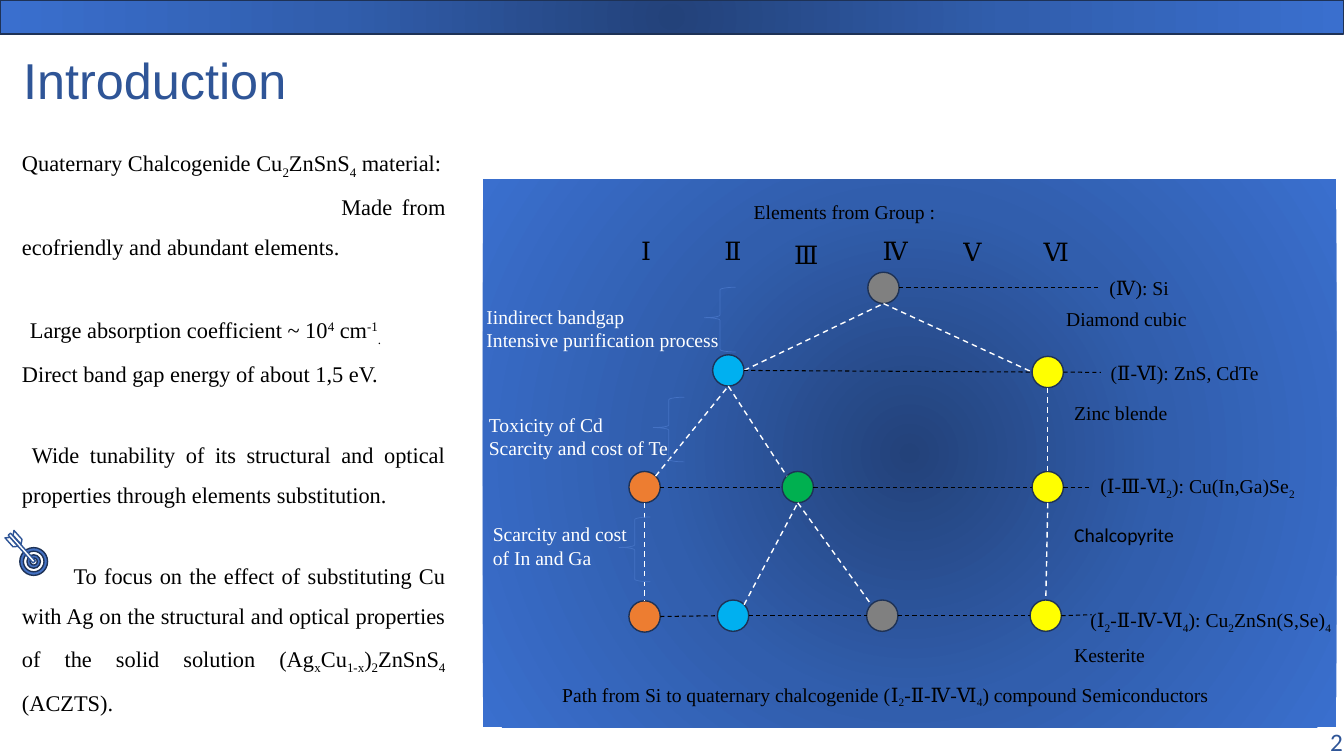
import pptx
import pptx.util
import pptx.oxml
import pptx.oxml.ns
import pptx.dml.color
import pptx.enum.dml
import pptx.enum.shapes
import pptx.enum.text

Cm, Pt = pptx.util.Cm, pptx.util.Pt
SHAPE = pptx.enum.shapes.MSO_SHAPE
ALIGN = pptx.enum.text.PP_ALIGN

COLORS = {"white": "FFFFFF", "black": "000000", "navy": "2F5597", "edge": "1E3256",
          "blue": "4472C4", "grey": "808080", "yellow": "FFFF00", "cyan": "00B0F0",
          "green": "00B050", "orange": "ED7D31",
          "deep": "23427A", "mid": "315EAD", "light": "3A6FCE"}

# Content: text between bars is subscript, or superscript after ^
TITLE = "Introduction"
# text, first-line indent (cm), space before (pt)
BODY = [
    ("Quaternary Chalcogenide Cu|2|ZnSnS|4| material:", 0, 0),
    ("Made from ecofriendly and abundant elements.", 8.05, 0),
    ("Large absorption coefficient ~ 10|^4| cm|^-1||.|", 0.2, 29),
    ("Direct band gap energy of about 1,5 eV.", 0, 0),
    ("Wide tunability of its structural and optical properties through "
     "elements substitution.", 0.25, 29),
    ("To focus on the effect of substituting Cu with Ag on the structural and optical "
     "properties of the solid solution (Ag|x|Cu|1-x|)|2|ZnSnS|4| (ACZTS).", 1.3, 29),
]
PANELS = [(0, 0, 33.86, 0.86, "edge"), (12.17, 4.52, 21.51, 13.81, None)]
# numeral, centre x, top
GROUPS = [("Ⅰ", 16.28, 5.84), ("Ⅱ", 18.47, 5.84), ("Ⅲ", 20.32, 5.95),
          ("Ⅳ", 22.56, 5.84), ("Ⅴ", 24.51, 5.87), ("Ⅵ", 26.62, 5.87)]
NODE = 0.79
NODES = {  # left, top, colour
    "Si": (21.87, 6.86, "grey"),
    "II a": (17.96, 8.94, "cyan"), "VI a": (26.01, 8.98, "yellow"),
    "I b": (15.85, 11.88, "orange"), "III b": (19.71, 11.88, "green"),
    "VI b": (26.01, 11.88, "yellow"),
    "I c": (15.85, 15.14, "orange"), "II c": (18.08, 15.12, "cyan"),
    "IV c": (21.84, 15.12, "grey"), "VI c": (25.96, 15.12, "yellow"),
}
SITES = {"top": (0.5, 0), "left": (0, 0.5), "bottom": (0.5, 1), "right": (1, 0.5),
         "top left": (0.15, 0.15), "top right": (0.85, 0.15)}
PATHS = [("Si", "bottom", "VI a", "left"), ("II a", "right", "Si", "bottom"),
         ("II a", "bottom", "III b", "top left"), ("I b", "top right", "II a", "bottom"),
         ("III b", "bottom", "IV c", "top left"), ("II c", "top right", "III b", "bottom"),
         ("I b", "bottom", "I c", "top"), ("VI a", "bottom", "VI b", "top"),
         ("VI b", "bottom", "VI c", "top")]
ROWS = [("II a", "VI a"), ("I b", "III b", "VI b"), ("I c", "II c", "IV c", "VI c")]
# node, text, left, top, width
COMPOUNDS = [("Si", "(Ⅳ): Si", 27.71, 6.86, 2.77),
             ("VI a", "(Ⅱ-Ⅵ): ZnS, CdTe", 27.74, 8.99, 4.45),
             ("VI b", "(Ⅰ-Ⅲ-Ⅵ|2|): Cu(In,Ga)Se|2|", 27.48, 11.88, 5.97)]
KESTERITE = ("(Ⅰ|2|-Ⅱ-Ⅳ-Ⅵ|4|): Cu|2|ZnSn(S,Se)|4|", 27.23, 15.27, 6.65, 0.79)
KESTERITE_LINK = (27.51, 15.49)
STRUCTURES = [("Diamond cubic", 26.62, 7.62, "Times New Roman"),
              ("Zinc blende", 26.82, 9.98, "Times New Roman"),
              ("Chalcopyrite", 26.82, 13.06, "Calibri"),
              ("Kesterite", 26.82, 16.08, "Times New Roman")]
# lines, text left and top, brace left and top
DRAWBACKS = [
    (["Iindirect bandgap", "Intensive purification process"], 12.01, 7.54, 17.75, 7.24),
    (["Toxicity of Cd", "Scarcity and cost of Te"], 12.07, 10.27, 16.46, 10.01),
    (["Scarcity and cost", "of In and Ga"], 12.17, 13.03, 15.6, 13.03)]
HEADING = ("Elements from Group :", 18.54, 4.85, 5.49, 0.97)
CAPTION = ("Path from Si to quaternary chalcogenide (Ⅰ|2|-Ⅱ-Ⅳ-Ⅵ|4|) compound Semiconductors",
           13.92, 17.04, 18.21, 0.99)
TARGET = (0.85, 14.15)
RINGS = [(0.7, "blue"), (0.52, "white"), (0.34, "blue"), (0.18, "white")]
# shape, left, top, width, height, flipped
ARROW = [(SHAPE.ROUNDED_RECTANGLE, 0.08, 13.77, 0.94, 0.08, False),
         (SHAPE.PARALLELOGRAM, 0.1, 13.61, 0.38, 0.1, False),
         (SHAPE.PARALLELOGRAM, 0.25, 13.49, 0.38, 0.1, True)]


def rgb(name):
    return pptx.dml.color.RGBColor.from_string(COLORS[name])


def add_runs(p, text, size, color="black", font="Times New Roman"):
    for i, part in enumerate(text.split("|")):
        if not part:
            continue
        r = p.add_run()
        r.text = part.lstrip("^") if i % 2 else part
        r.font.size, r.font.name = Pt(size), font
        r.font.color.rgb = rgb(color)
        if i % 2:
            r.font._element.set("baseline", "30000" if part[0] == "^" else "-25000")


def add_text(lines, x, y, w, h, size=14, color="black", font="Times New Roman",
             align=ALIGN.LEFT, inset=None):
    s = slide.shapes.add_textbox(Cm(x), Cm(y), Cm(w), Cm(h))
    tf = s.text_frame
    tf.word_wrap = True
    tf.vertical_anchor = pptx.enum.text.MSO_ANCHOR.MIDDLE
    if inset is not None:
        tf.margin_left = tf.margin_right = tf.margin_top = tf.margin_bottom = Cm(inset)
    for i, line in enumerate(lines):
        p = tf.add_paragraph() if i else tf.paragraphs[0]
        p.alignment = align
        add_runs(p, line, size, color, font)
    return s


def add_shape(kind, x, y, w, h, fill=None, line=None, width=1):
    s = slide.shapes.add_shape(kind, Cm(x), Cm(y), Cm(w), Cm(h))
    s.shadow.inherit = False
    if fill:
        s.fill.solid()
        s.fill.fore_color.rgb = rgb(fill)
    else:
        s.fill.background()
    if line:
        s.line.color.rgb = rgb(line)
        s.line.width = Pt(width)
    else:
        s.line.fill.background()
    return s


def add_dash(start, end, color, width):
    c = slide.shapes.add_connector(pptx.enum.shapes.MSO_CONNECTOR.STRAIGHT,
                                   Cm(start[0]), Cm(start[1]), Cm(end[0]), Cm(end[1]))
    c.line.color.rgb = rgb(color)
    c.line.width = Pt(width)
    c.line.dash_style = pptx.enum.dml.MSO_LINE.DASH
    c._element.spPr.append(pptx.oxml.parse_xml(
        "<a:effectLst %s/>" % pptx.oxml.ns.nsdecls("a")))
    return c


def site(node, side):
    x, y, _ = NODES[node]
    dx, dy = SITES[side]
    return x + dx * NODE, y + dy * NODE


def radial_fill(s):
    stops = "".join('<a:gs pos="%d"><a:srgbClr val="%s"/></a:gs>' % (pos, COLORS[name])
                    for pos, name in ((0, "deep"), (50000, "mid"), (100000, "light")))
    grad = pptx.oxml.parse_xml(
        '<a:gradFill %s rotWithShape="1"><a:gsLst>%s</a:gsLst><a:path path="circle">'
        '<a:fillToRect l="50000" t="50000" r="50000" b="50000"/></a:path></a:gradFill>'
        % (pptx.oxml.ns.nsdecls("a"), stops))
    sp = s._element.spPr
    sp.replace(sp.find(pptx.oxml.ns.qn("a:noFill")), grad)


prs = pptx.Presentation()
prs.slide_width, prs.slide_height = Cm(33.87), Cm(19.05)
slide = prs.slides.add_slide(prs.slide_layouts[1])
title, body = slide.placeholders

# Title and body text
for s, (x, y, w, h) in ((title, (0.33, 1.27, 11.13, 1.45)), (body, (0.3, 3.25, 11.18, 15.3))):
    s.left, s.top, s.width, s.height = Cm(x), Cm(y), Cm(w), Cm(h)
    s.text_frame.word_wrap = True
    s.text_frame.auto_size = pptx.enum.text.MSO_AUTO_SIZE.NONE
title.text_frame.vertical_anchor = pptx.enum.text.MSO_ANCHOR.MIDDLE
title.text_frame.paragraphs[0].alignment = ALIGN.LEFT
add_runs(title.text_frame.paragraphs[0], TITLE, 36, "navy", "Arial")
tf = body.text_frame
for i, (text, indent, before) in enumerate(BODY):
    p = tf.add_paragraph() if i else tf.paragraphs[0]
    p.alignment = ALIGN.JUSTIFY
    p.line_spacing, p.space_before = 1.5, Pt(before)
    pPr = p._element.get_or_add_pPr()
    pPr.set("marL", "0")
    pPr.set("indent", str(int(Cm(indent))))
    pPr.append(pptx.oxml.parse_xml("<a:buNone %s/>" % pptx.oxml.ns.nsdecls("a")))
    add_runs(p, text, 16)

# Top bar and diagram panel
for x, y, w, h, line in PANELS:
    radial_fill(add_shape(SHAPE.RECTANGLE, x, y, w, h, line=line))

# Group numerals
add_text([HEADING[0]], *HEADING[1:], align=ALIGN.CENTER)
for numeral, x, y in GROUPS:
    add_text([numeral], x - 0.5, y, 1, 0.94, size=18, align=ALIGN.CENTER, inset=0)

# Element nodes and dashed paths
for x, y, color in NODES.values():
    add_shape(SHAPE.FLOWCHART_CONNECTOR, x, y, NODE, NODE, color, "edge")
for start, side, end, end_side in PATHS:
    add_dash(site(start, side), site(end, end_side), "white", 1)
for row in ROWS:
    for start, end in zip(row, row[1:]):
        add_dash(site(start, "right"), site(end, "left"), "black", 0.75)

# Compounds and crystal structures
for node, text, x, y, w in COMPOUNDS:
    label = add_text([text], x, y, w, NODE)
    c = add_dash(site(node, "right"), (x, y + NODE / 2), "black", 0.75)
    c.end_connect(label, 1)
add_text([KESTERITE[0]], *KESTERITE[1:])
add_dash(site("VI c", "right"), KESTERITE_LINK, "black", 0.75)
for text, x, y, font in STRUCTURES:
    add_text([text], x, y, 4.8, 0.84, font=font)
add_text([CAPTION[0]], *CAPTION[1:])

# Drawbacks with braces
for lines, x, y, brace_x, brace_y in DRAWBACKS:
    add_text(lines, x, y, 7.1, 1.45, color="white")
    s = add_shape(SHAPE.LEFT_BRACE, brace_x, brace_y, 0.79, 1.63, line="blue", width=0.5)
    s.adjustments[0], s.adjustments[1] = 0.083, 0.47

# Target with arrow
for d, color in RINGS:
    add_shape(SHAPE.OVAL, TARGET[0] - d / 2, TARGET[1] - d / 2, d, d, color, "edge")
for kind, x, y, w, h, flipped in ARROW:
    s = add_shape(kind, x, y, w, h, "white", "navy")
    s.rotation = 228.2
    if kind == SHAPE.PARALLELOGRAM:
        s.adjustments[0] = 0.778
    if flipped:
        s._element.spPr.xfrm.set("flipH", "1")

# Page number
add_text(["2"], 33.17, 18.24, 1.02, 0.89, 18, "navy", "Calibri", ALIGN.CENTER)

prs.save("out.pptx")
